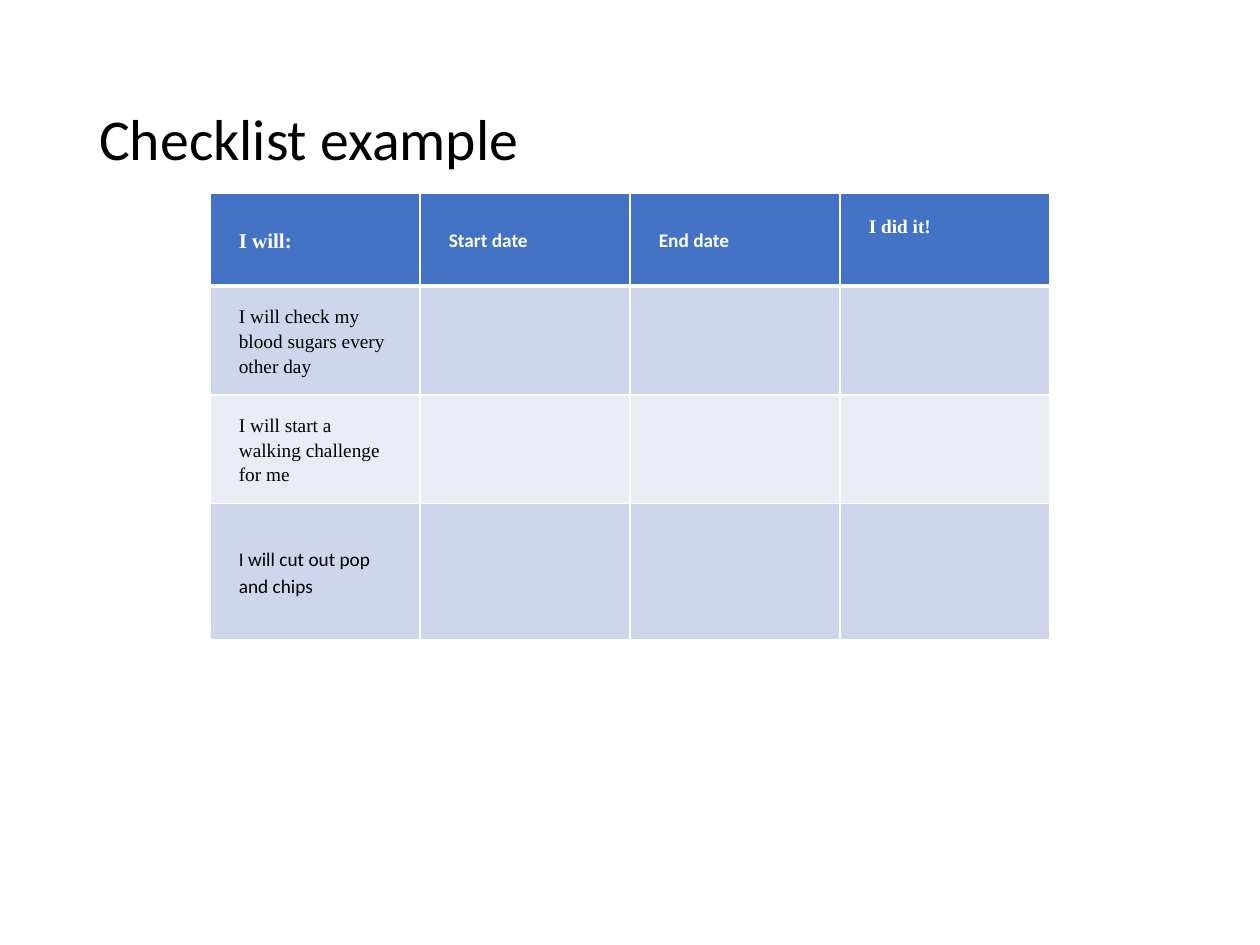
from dataclasses import dataclass

from lxml import etree
from pptx import Presentation
from pptx import util as u
from pptx.dml.color import RGBColor
from pptx.enum import text
from pptx.oxml import ns


@dataclass(frozen=True)
class Theme:
    sans: str = "Calibri"
    serif: str = "Times New Roman"
    title_size: float = 33
    lead_size: float = 12
    cell_size: float = 11
    ink: str = "000000"
    white: str = "FFFFFF"
    header: str = "4472C4"
    bands: tuple = ("CFD5EA", "E9EBF5")


class Checklist:
    def __init__(self, page, theme):
        self.page = page
        self.theme = theme

    def words(self, frame, words, font, size, color, spacing, bold=False):
        frame.word_wrap = True
        para = frame.paragraphs[0]
        para.text = words
        para.alignment = text.PP_ALIGN.LEFT
        para.line_spacing = spacing
        para.font.name = font
        para.font.size = u.Pt(size)
        para.font.bold = bold
        para.font.color.rgb = RGBColor.from_string(color)

    def title(self, words, left, top, width, height):
        box = self.page.shapes.title
        box.left, box.top = u.Pt(left), u.Pt(top)
        box.width, box.height = u.Pt(width), u.Pt(height)
        box.text_frame.vertical_anchor = text.MSO_ANCHOR.MIDDLE
        self.words(box.text_frame, words, self.theme.sans,
                   self.theme.title_size, self.theme.ink, 0.9)

    def borders(self, cell, widths):
        properties = cell._tc.get_or_add_tcPr()
        for index, (side, width) in enumerate(widths.items()):
            line = etree.Element(ns.qn(f"a:ln{side}"), w=str(u.Pt(width)))
            fill = etree.SubElement(line, ns.qn("a:solidFill"))
            etree.SubElement(fill, ns.qn("a:srgbClr"), val=self.theme.white)
            properties.insert(index, line)

    def cell(self, cell, row, entry):
        theme = self.theme
        is_header = row == 0
        color = theme.header if is_header else theme.bands[(row - 1) % 2]
        cell.fill.solid()
        cell.fill.fore_color.rgb = RGBColor.from_string(color)
        self.borders(cell, {"L": 1, "R": 1, "T": 3 if row == 1 else 1,
                            "B": 3 if is_header else 1})
        if entry is None:
            return
        words, font, size, bottom = entry
        cell.vertical_anchor = text.MSO_ANCHOR.MIDDLE
        cell.margin_left = cell.margin_right = u.Pt(16.5)
        cell.margin_top, cell.margin_bottom = u.Pt(10), u.Pt(bottom)
        self.words(cell.text_frame, words, font, size,
                   theme.white if is_header else theme.ink, 1.15, is_header)

    def table(self, entries, left, top, column_width, row_heights):
        columns = len(entries[0])
        table = self.page.shapes.add_table(
            len(entries), columns, u.Pt(left), u.Pt(top),
            u.Pt(column_width * columns), u.Pt(sum(row_heights))).table
        for column in table.columns:
            column.width = u.Pt(column_width)
        for row, height in enumerate(row_heights):
            table.rows[row].height = u.Pt(height)
            for column, entry in enumerate(entries[row]):
                self.cell(table.cell(row, column), row, entry)


def main():
    deck = Presentation()
    deck.slide_width, deck.slide_height = u.Pt(720), u.Pt(540)
    theme = Theme()
    checklist = Checklist(deck.slides.add_slide(deck.slide_layouts[5]), theme)
    checklist.title("Checklist example", 49.5, 28.75, 621, 104.4)

    inset, raised = 10, 26
    headings = [
        ("I will:", theme.serif, theme.lead_size, inset),
        ("Start date", theme.sans, theme.cell_size, inset),
        ("End date", theme.sans, theme.cell_size, inset),
        ("I did it!", theme.serif, theme.cell_size, raised),
    ]
    goals = [
        ("I will check my blood sugars every other day", theme.serif),
        ("I will start a walking challenge for me", theme.serif),
        ("I will cut out pop and chips", theme.sans),
    ]
    rows = [[(words, font, theme.cell_size, inset), None, None, None]
            for words, font in goals]
    checklist.table([headings] + rows, 120, 110.25, 120,
                    [53.25, 53.25, 53.25, 77.5])
    deck.save("out.pptx")


if __name__ == "__main__":
    main()
